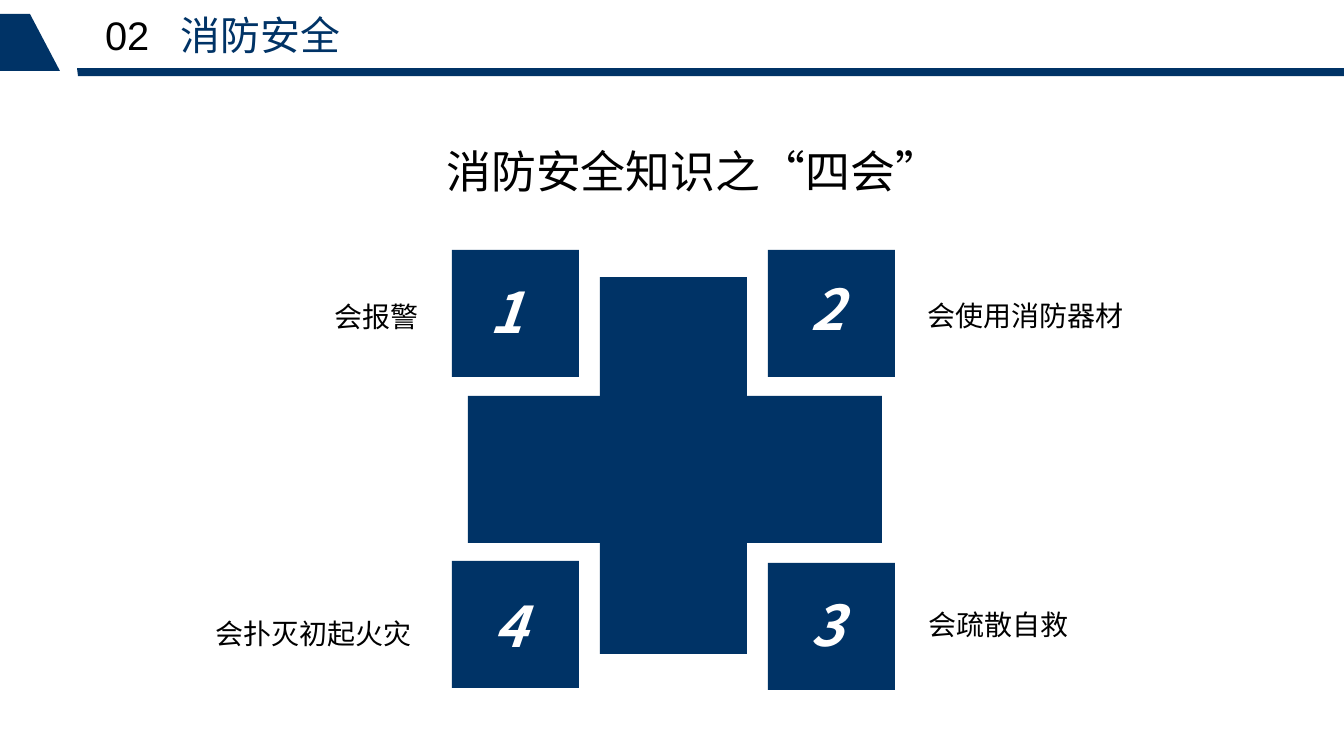
from lxml.etree import SubElement
from pptx import Presentation
from pptx.dml.color import RGBColor
from pptx.enum.shapes import MSO_SHAPE as Shape
from pptx.enum.text import MSO_ANCHOR as Anchor, MSO_AUTO_SIZE as Fit, PP_ALIGN as Align
from pptx.oxml.ns import qn
from pptx.util import Pt

PX = 9565
SLIDE_SIZE = (1344, 756)
NAVY = RGBColor(0x00, 0x33, 0x66)
BLACK = RGBColor(0, 0, 0)
WHITE = RGBColor(0xFF, 0xFF, 0xFF)
CJK = "Noto Sans CJK SC"

SECTION_NUMBER, SECTION_NAME = "02", "消防安全"
SECTION_BOX, SECTION_TAB = (105, 11, 820, 58), 76
HEADING, HEADING_BOX = "消防安全知识之“四会”", (437, 139, 573, 64)

BANNER = [
    [(0, 14), (30, 14), (60, 71), (0, 71)],
    [(77, 68), (1344, 68), (1344, 76), (78, 76)],
]
CROSS = [(468, 396, 414, 147), (600, 277, 147, 377)]
SQUARE, NUMBER_SIZE, LABEL_HEIGHT = 127, (135, 77), 60
SKILLS = [
    {"label": "会报警", "square": (452, 250), "number": (439, 273), "text": (323, 278, 105)},
    {"label": "会使用消防器材", "square": (768, 250), "number": (760, 270), "text": (915, 277, 218)},
    {"label": "会疏散自救", "square": (768, 563), "number": (760, 586), "text": (916, 586, 162)},
    {"label": "会扑灭初起火灾", "square": (452, 561), "number": (443, 587), "text": (195, 595, 226)},
]

NUMBER_FONT = {"size": Pt(42.2), "name": CJK, "bold": True, "italic": True}
LABEL_FONT = {"size": Pt(21.1), "name": CJK}
HEADING_FONT = {"size": Pt(33.8), "name": CJK}
SECTION_FONT = {"size": Pt(30), "name": CJK}
SECTION_NUMBER_FONT = {"size": Pt(30), "name": "Arial"}
NUMBER_LINE = {"alignment": Align.CENTER}
LABEL_LINE = {"alignment": Align.RIGHT, "line_spacing": 1.5}
LEFT_LINE = {"alignment": Align.LEFT}
BOX_FRAME = {"word_wrap": True, "auto_size": Fit.SHAPE_TO_FIT_TEXT}
HEADING_FRAME = {**BOX_FRAME, "vertical_anchor": Anchor.MIDDLE}
SECTION_FRAME = {
    "word_wrap": True, "auto_size": Fit.NONE, "vertical_anchor": Anchor.TOP,
    "margin_left": 0, "margin_right": 0, "margin_top": 0, "margin_bottom": 0,
}


def emu(lengths):
    return [length * PX for length in lengths]


def apply(target, values):
    for key, value in values.items():
        setattr(target, key, value)


def paint(shape):
    shape.shadow.inherit = False
    shape.fill.solid()
    shape.fill.fore_color.rgb = NAVY
    shape.line.fill.background()


def add_block(slide, box):
    paint(slide.shapes.add_shape(Shape.RECTANGLE, *emu(box)))


def add_run(paragraph, text, font, color):
    run = paragraph.add_run()
    run.text = text
    apply(run.font, font)
    run.font.color.rgb = color
    SubElement(run.font._element, qn("a:ea"), typeface=font["name"])


def add_text(slide, text, box, font, color, line, frame=BOX_FRAME):
    text_frame = slide.shapes.add_textbox(*emu(box)).text_frame
    apply(text_frame, frame)
    paragraph = text_frame.paragraphs[0]
    apply(paragraph, line)
    add_run(paragraph, text, font, color)


def add_section_title(slide):
    title = slide.shapes.title
    apply(title, dict(zip(("left", "top", "width", "height"), emu(SECTION_BOX))))
    apply(title.text_frame, SECTION_FRAME)
    paragraph = title.text_frame.paragraphs[0]
    apply(paragraph, LEFT_LINE)
    tabs = SubElement(paragraph._p.get_or_add_pPr(), qn("a:tabLst"))
    SubElement(tabs, qn("a:tab"), pos=str(SECTION_TAB * PX), algn="l")
    add_run(paragraph, SECTION_NUMBER + "\t", SECTION_NUMBER_FONT, BLACK)
    add_run(paragraph, SECTION_NAME, SECTION_FONT, NAVY)


def main():
    """Build the slide on the four fire safety skills."""
    deck = Presentation()
    deck.slide_width, deck.slide_height = emu(SLIDE_SIZE)
    slide = deck.slides.add_slide(deck.slide_layouts[5])
    add_section_title(slide)

    for outline in BANNER:
        builder = slide.shapes.build_freeform(*outline[0], scale=PX)
        builder.add_line_segments(outline[1:], close=True)
        paint(builder.convert_to_shape())

    add_text(slide, HEADING, HEADING_BOX, HEADING_FONT, BLACK, LEFT_LINE, HEADING_FRAME)
    for bar in CROSS:
        add_block(slide, bar)
    for number, skill in enumerate(SKILLS, 1):
        add_block(slide, (*skill["square"], SQUARE, SQUARE))
        add_text(slide, str(number), (*skill["number"], *NUMBER_SIZE), NUMBER_FONT, WHITE, NUMBER_LINE)
        add_text(slide, skill["label"], (*skill["text"], LABEL_HEIGHT), LABEL_FONT, BLACK, LABEL_LINE)

    deck.save("out.pptx")


if __name__ == "__main__":
    main()
